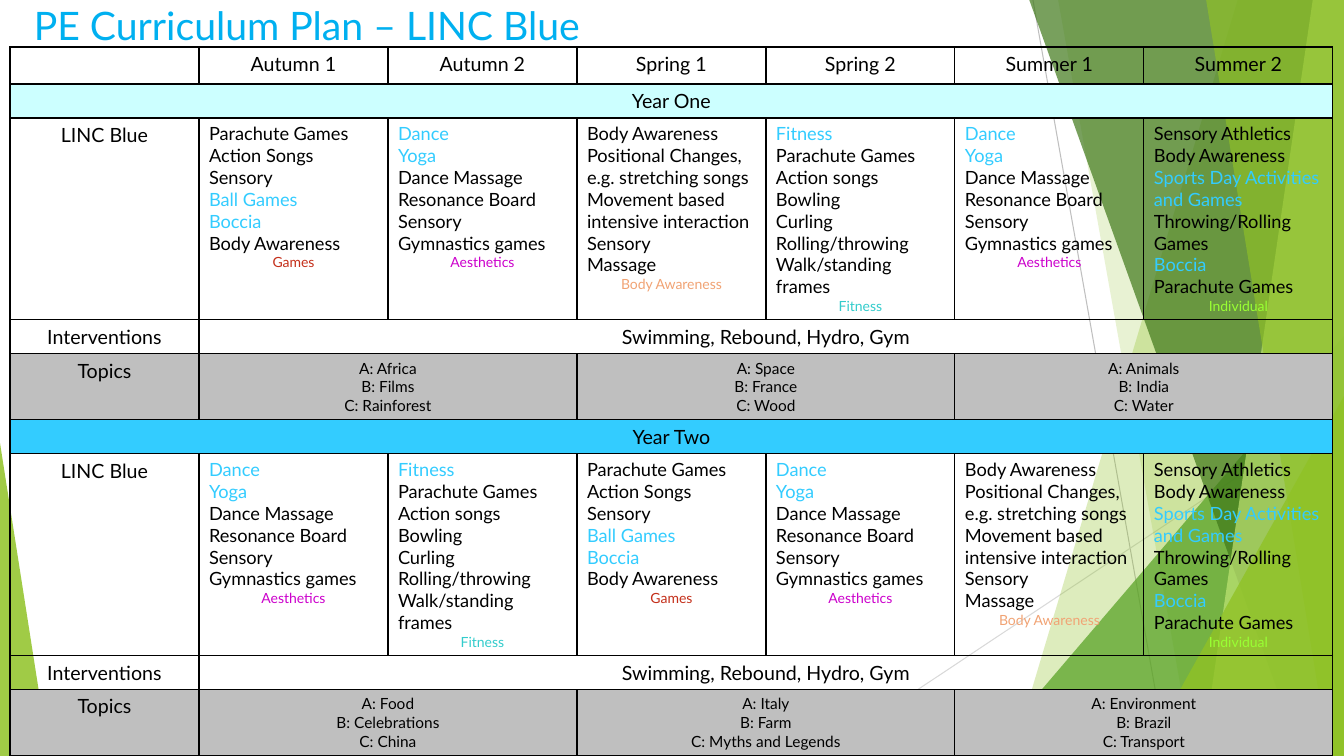
from lxml.etree import SubElement
from pptx import Presentation
from pptx.dml.color import RGBColor
from pptx.enum.shapes import MSO_CONNECTOR as Connector, MSO_SHAPE as Shape
from pptx.enum.text import PP_ALIGN as Align
from pptx.oxml import parse_xml
from pptx.oxml.ns import nsdecls, qn
from pptx.util import Pt

TITLE = "PE Curriculum Plan – LINC Blue"
TERMS = ["Autumn 1", "Autumn 2", "Spring 1", "Spring 2", "Summer 1", "Summer 2"]
GROUP = "LINC Blue"
INTERVENTIONS = "Swimming, Rebound, Hydro, Gym"

UNITS = {
    "Games": ["Parachute Games", "Action Songs", "Sensory", "Ball Games", "Boccia",
              "Body Awareness"],
    "Aesthetics": ["Dance", "Yoga", "Dance Massage", "Resonance Board", "Sensory",
                   "Gymnastics games"],
    "Body Awareness": ["Body Awareness", "Positional Changes, e.g. stretching songs",
                       "Movement based intensive interaction", "Sensory", "Massage"],
    "Fitness": ["Fitness", "Parachute Games", "Action songs", "Bowling", "Curling",
                "Rolling/throwing", "Walk/standing frames"],
    "Individual": ["Sensory Athletics", "Body Awareness", "Sports Day Activities and Games",
                   "Throwing/Rolling Games", "Boccia", "Parachute Games"],
}
UNIT_COLORS = {"Games": "C42F1A", "Aesthetics": "CC00CC", "Body Awareness": "F1A374",
               "Fitness": "33CCCC", "Individual": "99FF33"}
HIGHLIGHTED = {"Ball Games", "Boccia", "Dance", "Yoga", "Fitness",
               "Sports Day Activities and Games"}
YEARS = [
    ("Year One", "CCFFFF",
     ["Games", "Aesthetics", "Body Awareness", "Fitness", "Aesthetics", "Individual"],
     [["A: Africa", "B: Films", "C: Rainforest"],
      ["A: Space", "B: France", "C: Wood"],
      ["A: Animals", "B: India", "C: Water"]]),
    ("Year Two", "33CCFF",
     ["Aesthetics", "Fitness", "Games", "Aesthetics", "Body Awareness", "Individual"],
     [["A: Food", "B: Celebrations", "C: China"],
      ["A: Italy", "B: Farm", "C: Myths and Legends"],
      ["A: Environment", "B: Brazil", "C: Transport"]]),
]

FONT, BLACK, BLUE, GREY = "Lato", "000000", "33CCFF", "BFBFBF"
WIDTH, HEIGHT = 1344, 756
TABLE_LEFT, TABLE_TOP, COLUMN = 10, 47, 189
HEADER_ROW, YEAR_ROWS = 37, [34, 201, 34, 66]

# Start and end of each thin line, then its colour
RAYS = [((1033, 0), (1167, 756), "BFBFBF"), ((1344, 406), (818, 756), "D9D9D9")]
# Bands reach the right edge: top-left x, bottom-left x; wedges: box and apex position
FACETS = [
    ("band", (1238, 1012), "90C226", 30),
    ("band", (1058, 1193), "90C226", 20),
    ("wedge", (985, 336, 359, 420, 1), "54A021", 72),
    ("band", (1029, 1301), "3F7819", 70),
    ("band", (1313, 1202), "C0E474", 70),
    ("band", (1206, 1329), "90C226", 65),
    ("wedge", (1143, 396, 201, 360, 1), "90C226", 80),
    ("wedge", (0, 443, 49, 313, 0), "90C226", 85),
]
EMU_PER_PX = 12192000 / WIDTH


def px(*lengths):
    return [round(length * EMU_PER_PX) for length in lengths]


def rgb(color):
    return RGBColor.from_string(color)


def style(paragraph, size, color, align=Align.CENTER):
    paragraph.alignment = align
    for run in paragraph.runs:
        run.font.name, run.font.size = FONT, Pt(size)
        run.font.color.rgb = rgb(color)


def draw_ray(shapes, start, end, color):
    ray = shapes.add_connector(Connector.STRAIGHT, *px(*start, *end))
    ray.line.color.rgb, ray.line.width = rgb(color), Pt(0.75)
    SubElement(ray._element.spPr, qn("a:effectLst"))


def draw_facet(shapes, kind, geometry, color, opacity):
    if kind == "band":
        top_x, bottom_x = geometry
        outline = shapes.build_freeform(top_x, -1, scale=EMU_PER_PX)
        outline.add_line_segments([(WIDTH, -1), (WIDTH, HEIGHT), (bottom_x, HEIGHT)])
        facet = outline.convert_to_shape()
    else:
        *box, apex = geometry
        facet = shapes.add_shape(Shape.ISOSCELES_TRIANGLE, *px(*box))
        facet.adjustments[0] = apex
    facet.shadow.inherit = False
    facet.line.fill.background()
    facet.fill.solid()
    facet.fill.fore_color.rgb = rgb(color)
    tint = facet._element.spPr.find(qn("a:solidFill"))[0]
    SubElement(tint, qn("a:alpha")).set("val", str(opacity * 1000))


def frame(cell):
    """Give a cell thin black borders and no fill."""
    properties = cell._tc.get_or_add_tcPr()
    for side in "LRTB":
        properties.append(parse_xml(
            f'<a:ln{side} {nsdecls("a")} w="12700"><a:solidFill>'
            f'<a:srgbClr val="{BLACK}"/></a:solidFill></a:ln{side}>'))
    cell.fill.background()


def write(cell, lines, size=14, fill=None):
    cell.text_frame.text = "\n".join(lines)
    for paragraph in cell.text_frame.paragraphs:
        style(paragraph, size, BLACK)
    if fill:
        cell.fill.solid()
        cell.fill.fore_color.rgb = rgb(fill)


def write_unit(cell, unit):
    write(cell, UNITS[unit] + [unit])
    *activities, label = cell.text_frame.paragraphs
    for activity in activities:
        style(activity, 13, BLUE if activity.text in HIGHLIGHTED else BLACK, Align.LEFT)
    style(label, 10, UNIT_COLORS[unit])


def write_year(table, top, name, color, units, topics):
    last = len(TERMS)
    banner, plan, extra, themes = range(top, top + len(YEAR_ROWS))
    table.cell(banner, 0).merge(table.cell(banner, last))
    write(table.cell(banner, 0), [name], fill=color)
    write(table.cell(plan, 0), [GROUP])
    for column, unit in enumerate(units, 1):
        write_unit(table.cell(plan, column), unit)
    write(table.cell(extra, 0), ["Interventions"])
    table.cell(extra, 1).merge(table.cell(extra, last))
    write(table.cell(extra, 1), [INTERVENTIONS])
    write(table.cell(themes, 0), ["Topics"], fill=GREY)
    for season, lines in enumerate(topics):
        column = 1 + 2 * season
        table.cell(themes, column).merge(table.cell(themes, column + 1))
        write(table.cell(themes, column), lines, 11, GREY)


def draw_plan(shapes):
    heights = [HEADER_ROW] + YEAR_ROWS * len(YEARS)
    columns = len(TERMS) + 1
    table = shapes.add_table(len(heights), columns, *px(
        TABLE_LEFT, TABLE_TOP, COLUMN * columns, sum(heights))).table
    table.first_row = table.horz_banding = False
    for row, height in zip(table.rows, heights):
        row.height = px(height)[0]
    for column in table.columns:
        column.width = px(COLUMN)[0]
    for cell in table.iter_cells():
        frame(cell)
    corner = table.cell(0, 0).text_frame.paragraphs[0]
    corner._p.get_or_add_endParaRPr().set("sz", "1400")
    for column, term in enumerate(TERMS, 1):
        write(table.cell(0, column), [term])
    for index, year in enumerate(YEARS):
        write_year(table, 1 + index * len(YEAR_ROWS), *year)


def main():
    deck = Presentation()
    deck.slide_width, deck.slide_height = px(WIDTH, HEIGHT)
    shapes = deck.slides.add_slide(deck.slide_layouts[6]).shapes
    for ray in RAYS:
        draw_ray(shapes, *ray)
    for facet in FACETS:
        draw_facet(shapes, *facet)
    title = shapes.add_textbox(*px(24, -4, 1295, 76)).text_frame
    title.word_wrap = True
    title.text = TITLE
    style(title.paragraphs[0], 28, "00B0F0", Align.LEFT)
    draw_plan(shapes)
    deck.save("out.pptx")


if __name__ == "__main__":
    main()
